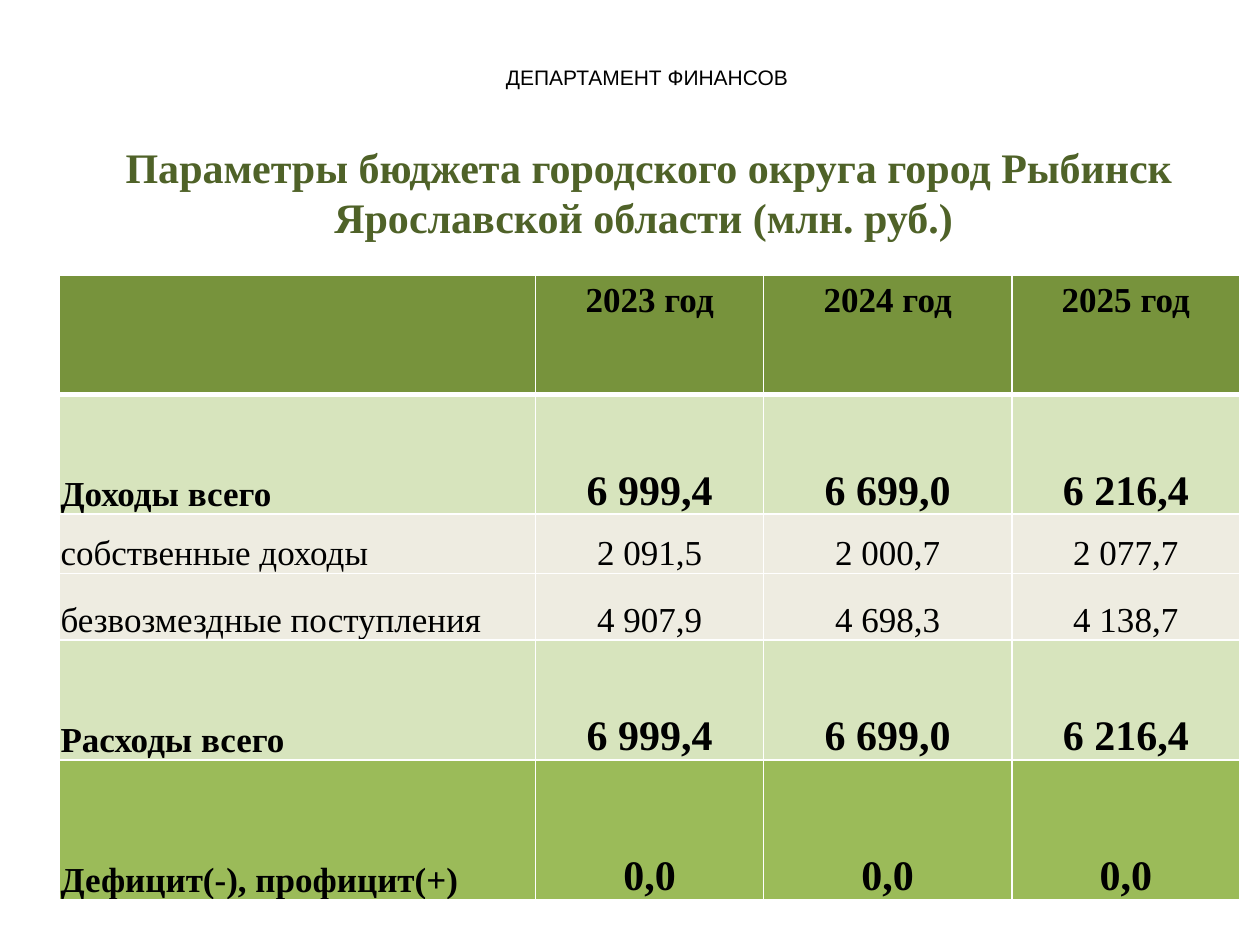
from lxml import etree
from pptx import Presentation
from pptx import util as u
from pptx.dml.color import RGBColor
from pptx.enum import text
from pptx.oxml import ns

Pt = u.Pt
THEME = {
    "heading": "4F6228", "ink": "000000", "line": "FFFFFF",
    "header": "77933C", "total": "D7E4BD", "detail": "EEECE1", "balance": "9BBB59",
    "serif": "Times New Roman", "sans": "Arial",
    "small": 12, "body": 20, "large": 24,
}
CENTER, LEFT = text.PP_ALIGN.CENTER, text.PP_ALIGN.LEFT


def write(frame, wording, size="body", font="serif", color="ink", bold=False, align=CENTER):
    paragraph = frame.paragraphs[0]
    paragraph.alignment = align
    paragraph.space_before = Pt(0)
    paragraph.line_spacing = 1.0
    run = paragraph.add_run()
    run.text = wording
    run.font.size = Pt(THEME[size])
    run.font.name = THEME[font]
    run.font.bold = bold
    run.font.color.rgb = RGBColor.from_string(THEME[color])


def draw_borders(cell, top=1, bottom=1):
    properties = cell._tc.get_or_add_tcPr()
    for side, width in (("L", 1), ("R", 1), ("T", top), ("B", bottom)):
        line = etree.SubElement(properties, ns.qn(f"a:ln{side}"), w=str(Pt(width)))
        fill = etree.SubElement(line, ns.qn("a:solidFill"))
        etree.SubElement(fill, ns.qn("a:srgbClr"), val=THEME["line"])


deck = Presentation()
deck.slide_width, deck.slide_height = Pt(720), Pt(540)
slide = deck.slides.add_slide(deck.slide_layouts[5])

# Department name
department = slide.shapes.add_textbox(Pt(258), Pt(33.1), Pt(226.8), Pt(21.6))
department.text_frame.word_wrap = True
write(department.text_frame, "ДЕПАРТАМЕНТ ФИНАНСОВ ", size="small", font="sans")

# Title
title = slide.shapes.title
title.left, title.top, title.width, title.height = Pt(50.4), Pt(77), Pt(640.8), Pt(65.5)
title.text_frame.vertical_anchor = text.MSO_ANCHOR.TOP
title.text_frame.auto_size = text.MSO_AUTO_SIZE.NONE
write(title.text_frame,
      "Параметры бюджета городского округа город Рыбинск Ярославской области (млн. руб.) ",
      size="large", color="heading", bold=True)

# Budget table: kind of row, height, cell values
budget_rows = [
    ("header", 68.4, ["", "2023 год", "2024 год", "2025 год"]),
    ("total", 68.4, ["Доходы всего", "6 999,4", "6 699,0", "6 216,4"]),
    ("detail", 33.8, ["собственные доходы", "2 091,5", "2 000,7", "2 077,7"]),
    ("detail", 38.2, ["безвозмездные поступления", "4 907,9", "4 698,3", "4 138,7"]),
    ("total", 68.4, ["Расходы всего", "6 999,4", "6 699,0", "6 216,4"]),
    ("balance", 79.9, ["Дефицит(-), профицит(+)", "0,0", "0,0", "0,0"]),
]
column_widths = [272.2, 130.3, 141.8, 130.3]
budget = slide.shapes.add_table(
    len(budget_rows), len(column_widths), Pt(33.9), Pt(157),
    Pt(sum(column_widths)), Pt(sum(height for _, height, _ in budget_rows))).table
for column, width in zip(budget.columns, column_widths):
    column.width = Pt(width)

for r, (kind, height, values) in enumerate(budget_rows):
    budget.rows[r].height = Pt(height)
    for c, value in enumerate(values):
        cell = budget.cell(r, c)
        draw_borders(cell, top=3 if r == 1 else 1, bottom=3 if r == 0 else 1)
        cell.fill.solid()
        cell.fill.fore_color.rgb = RGBColor.from_string(THEME[kind])
        if kind != "header":
            cell.vertical_anchor = text.MSO_ANCHOR.BOTTOM
            cell.margin_left = cell.margin_right = cell.margin_top = Pt(0.7)
            cell.margin_bottom = Pt(0)
        if value:
            is_large = kind in ("total", "balance") and c > 0
            write(cell.text_frame, value, size="large" if is_large else "body",
                  bold=kind != "detail", align=CENTER if c or kind == "header" else LEFT)

deck.save("out.pptx")
